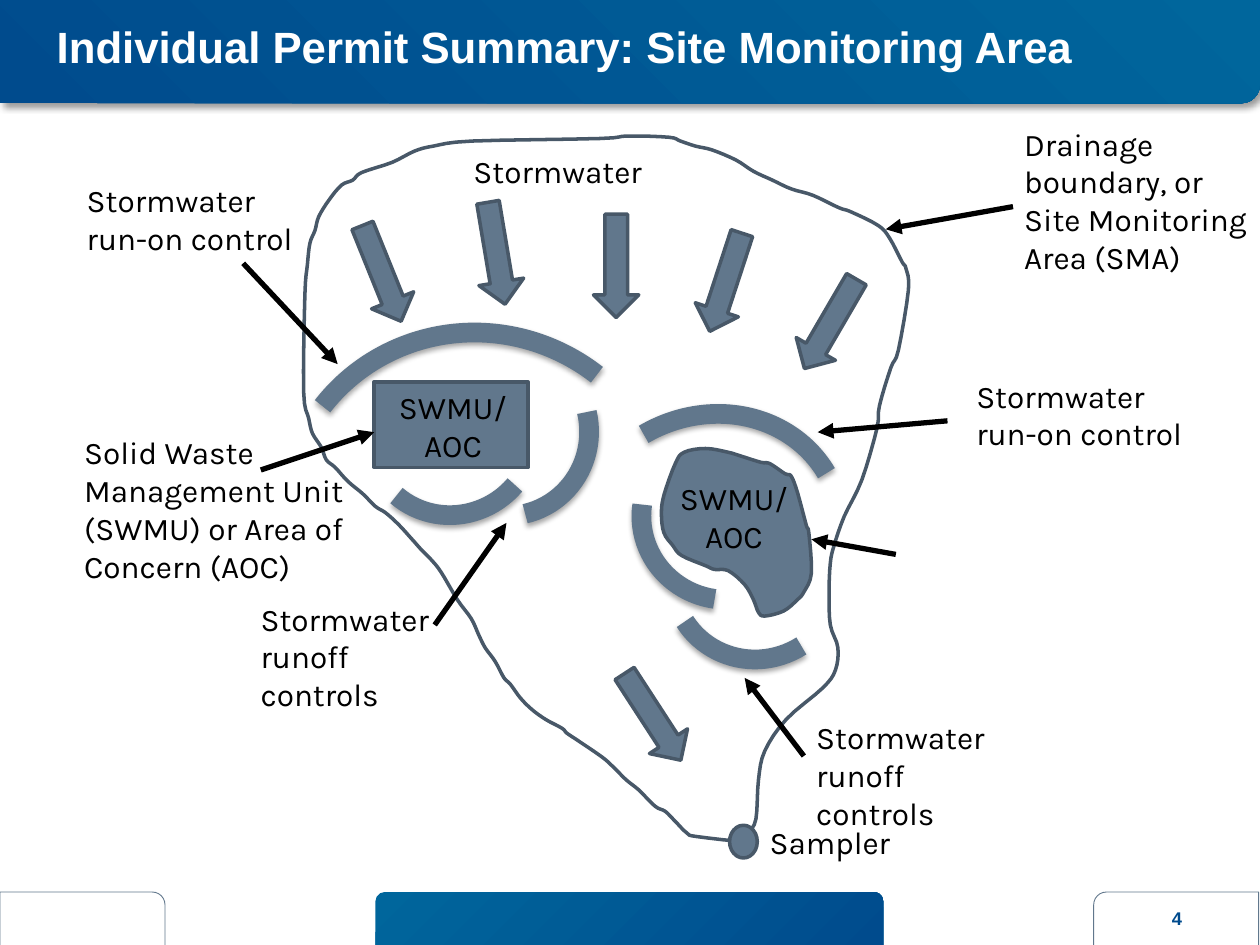
from typing import NamedTuple

from lxml import etree
from pptx import Presentation
from pptx.dml.color import RGBColor
from pptx.enum.shapes import MSO_CONNECTOR, MSO_SHAPE
from pptx.enum.text import MSO_ANCHOR, MSO_AUTO_SIZE, PP_ALIGN
from pptx.oxml.ns import qn
from pptx.util import Inches, Pt

ARC, ARROW, OVAL, RECT = MSO_SHAPE.ARC, MSO_SHAPE.RIGHT_ARROW, MSO_SHAPE.OVAL, MSO_SHAPE.RECTANGLE
ONE_ROUND, TWO_ROUND = MSO_SHAPE.ROUND_1_RECTANGLE, MSO_SHAPE.ROUND_2_SAME_RECTANGLE
STRAIGHT = MSO_CONNECTOR.STRAIGHT
LEFT, CENTER = PP_ALIGN.LEFT, PP_ALIGN.CENTER
TOP, MIDDLE = MSO_ANCHOR.TOP, MSO_ANCHOR.MIDDLE
GROW, FIXED = MSO_AUTO_SIZE.SHAPE_TO_FIT_TEXT, MSO_AUTO_SIZE.NONE

COLORS = {"slate": "61778C", "edge": "485868", "navy": "004B8D", "teal": "00669C",
          "white": "FFFFFF", "black": "000000"}


class Box(NamedTuple):
    left: float
    top: float
    width: float
    height: float


class Turned(NamedTuple):
    box: Box
    rotation: float


class Label(NamedTuple):
    text: str
    box: Box
    align: PP_ALIGN = LEFT


class Pointer(NamedTuple):
    start: tuple[float, float]
    end: tuple[float, float]


class Shadow(NamedTuple):
    alpha: int
    blur: float
    distance: float
    angle: int


BAND_SHADOW = Shadow(40, 4, 3, 45)
BERM_SHADOW = Shadow(35, 3.1, 1.8, 90)

BOUNDARY = [
    (5.94, 6.68), (5.53, 6.64), (5.45, 6.61), (5.36, 6.52), (5.28, 6.44), (5.2, 6.4), (5.07, 6.27),
    (4.97, 6.19), (4.87, 6.09), (4.78, 6.01), (4.59, 5.88), (4.5, 5.82), (4.46, 5.78), (4.33, 5.71),
    (4.22, 5.63), (4.13, 5.54), (4.05, 5.43), (4, 5.38), (3.93, 5.25), (3.85, 5.14), (3.8, 5.04),
    (3.74, 4.91), (3.63, 4.76), (3.5, 4.54), (3.42, 4.44), (3.35, 4.37), (3.27, 4.28), (3.16, 4.16),
    (3.06, 4.07), (2.98, 4.02), (2.88, 3.92), (2.76, 3.82), (2.66, 3.71), (2.59, 3.65), (2.55, 3.55),
    (2.48, 3.44), (2.45, 3.32), (2.41, 3.11), (2.42, 2.34), (2.44, 2.1), (2.46, 1.93), (2.5, 1.83),
    (2.53, 1.72), (2.61, 1.59), (2.71, 1.47), (2.8, 1.43), (2.87, 1.37), (3.11, 1.29), (3.29, 1.2),
    (3.44, 1.16), (3.75, 1.12), (4.76, 1.1), (4.98, 1.08), (5.31, 1.09), (5.4, 1.12), (5.52, 1.16),
    (5.65, 1.19), (5.84, 1.27), (5.98, 1.36), (6.13, 1.43), (6.28, 1.5), (6.45, 1.55), (6.66, 1.65),
    (6.75, 1.68), (6.97, 1.79), (7.06, 1.89), (7.16, 2.08), (7.19, 2.13), (7.21, 2.3), (7.13, 2.78),
    (7.07, 2.92), (6.98, 3.22), (6.96, 3.4), (6.84, 3.81), (6.7, 4.1), (6.62, 4.33), (6.59, 4.47),
    (6.58, 4.7), (6.59, 4.96), (6.65, 5.14), (6.63, 5.32), (6.53, 5.46), (6.24, 5.71), (6.07, 5.96),
    (6.02, 6.19), (6, 6.5), (5.94, 6.62)]
WASTE_AREA = [
    (5.78, 3.59), (5.6, 3.56), (5.43, 3.59), (5.36, 3.68), (5.27, 3.93), (5.25, 4.08), (5.27, 4.23),
    (5.34, 4.33), (5.41, 4.41), (5.6, 4.49), (5.67, 4.52), (5.78, 4.53), (5.91, 4.64), (5.98, 4.76),
    (6.02, 4.86), (6.07, 4.89), (6.22, 4.85), (6.33, 4.76), (6.38, 4.7), (6.44, 4.55), (6.42, 4.23),
    (6.4, 4.17), (6.33, 3.91), (6.28, 3.78), (6.23, 3.76), (6.11, 3.68), (6.04, 3.67), (5.88, 3.62)]

FLOW_ARROWS = [Turned(Box(left, top, 0.82, 0.36), rotation) for left, top, rotation in (
    (2.62, 1.99, 68), (3.53, 1.83, 80.5), (4.48, 1.93, 90), (5.35, 2.06, 108.1),
    (6.18, 2.39, 120.2), (4.77, 5.51, 57))]
RUNOFF_BERMS = [Turned(Box(left, top, 1.35, 1.32), rotation) for left, top, rotation in (
    (5.09, 3.44, 188.1), (5.33, 3.91, 147.5), (3.34, 2.76, 76.9), (2.91, 2.76, 130.5))]
RUN_ON_BERMS = [Turned(Box(4.52, 3.31, 2.19, 2), 329.6), Turned(Box(2.26, 2.62, 3.07, 3.13), 307.9)]

RUN_ON, RUNOFF, WASTE = "Stormwater run-on control", "Stormwater runoff controls", "SWMU/AOC"
LABELS = [
    Label("Stormwater", Box(3.66, 1.16, 2.4, 0.4)),
    Label(WASTE, Box(3.04, 3.03, 1.11, 0.71), CENTER),
    Label(WASTE, Box(5.27, 3.75, 1.11, 0.71), CENTER),
    Label("Sampler", Box(6.01, 6.48, 1.66, 0.4)),
    Label(RUNOFF, Box(6.38, 5.65, 1.87, 0.71)),
    Label(RUNOFF, Box(1.97, 4.71, 1.87, 0.71)),
    Label(RUN_ON, Box(7.65, 2.94, 1.94, 0.71)),
    Label(RUN_ON, Box(0.59, 1.39, 1.87, 0.71)),
    Label("Solid Waste Management Unit (SWMU) or Area of Concern (AOC)", Box(0.57, 3.39, 2.7, 1.31)),
    Label("Drainage boundary, or Site Monitoring Area (SMA)", Box(8.03, 0.94, 2, 1.31))]
POINTERS = [
    Pointer((6.38, 6), (5.91, 5.38)), Pointer((7.11, 4.4), (6.44, 4.28)),
    Pointer((7.52, 3.34), (6.49, 3.43)), Pointer((8.04, 1.64), (7.03, 1.82)),
    Pointer((3.45, 4.96), (4.02, 4.15)), Pointer((1.93, 2.09), (2.68, 2.89)),
    Pointer((2.07, 3.73), (2.97, 3.43))]


def rgb(name: str) -> RGBColor:
    return RGBColor.from_string(COLORS[name])


def paint(shape, fill: str | None, line: str | None, weight: float = 2) -> None:
    shape.shadow.inherit = False
    if fill:
        shape.fill.solid()
        shape.fill.fore_color.rgb = rgb(fill)
    else:
        shape.fill.background()
    if line:
        shape.line.color.rgb = rgb(line)
        shape.line.width = Pt(weight)
    else:
        shape.line.fill.background()


def add_preset(shapes, kind, box: Box, fill: str | None = "slate", line: str | None = "edge",
               weight: float = 2, rotation: float = 0):
    shape = shapes.add_shape(kind, *map(Inches, box))
    paint(shape, fill, line, weight)
    shape.rotation = rotation
    return shape


def cast_shadow(shape, shadow: Shadow) -> None:
    effects = shape._element.spPr.find(qn("a:effectLst"))
    outer = etree.SubElement(effects, qn("a:outerShdw"), blurRad=str(Pt(shadow.blur)),
                             dist=str(Pt(shadow.distance)), dir=str(shadow.angle * 60000),
                             algn="ctr", rotWithShape="0")
    color = etree.SubElement(outer, qn("a:srgbClr"), val=COLORS["black"])
    etree.SubElement(color, qn("a:alpha"), val=str(shadow.alpha * 1000))


def add_berm(shapes, berm: Turned) -> None:
    arc = add_preset(shapes, ARC, berm.box, None, "slate", 11.25, berm.rotation)
    cast_shadow(arc, BERM_SHADOW)


def add_band(shapes, kind, box: Box, start: str, end: str):
    band = add_preset(shapes, kind, box, None, None)
    band.fill.gradient()
    band.fill.gradient_angle = 315
    for stop, color, position in zip(band.fill.gradient_stops, (start, end), (0, 1)):
        stop.color.rgb = rgb(color)
        stop.position = position
    return band


def add_tab(shapes, left: float):
    tab = add_preset(shapes, ONE_ROUND, Box(left, 7.08, 1.31, 0.44), "white", "slate", 0.5)
    tab.adjustments[0] = 0.23
    return tab


def flip(shape, direction: str) -> None:
    shape._element.spPr.get_or_add_xfrm().set(direction, "1")


def smooth(points: list[tuple[float, float]], steps: int = 4) -> list[tuple[float, float]]:
    curve = []
    for i, p1 in enumerate(points):
        p0, p2, p3 = points[i - 1], points[(i + 1) % len(points)], points[(i + 2) % len(points)]
        for t in (step / steps for step in range(steps)):
            curve.append(tuple(
                Inches(b + t * (c - a) / 2 + t**2 * (a - 2.5 * b + 2 * c - d / 2)
                       + t**3 * (1.5 * (b - c) + (d - a) / 2))
                for a, b, c, d in zip(p0, p1, p2, p3)))
    return curve


def add_outline(shapes, points: list[tuple[float, float]], fill: str | None) -> None:
    first, *rest = smooth(points)
    builder = shapes.build_freeform(*first)
    builder.add_line_segments(rest, close=True)
    paint(builder.convert_to_shape(), fill, "edge")


def add_text(shapes, label: Label, size: float = 18, font: str = "Karla", color: str = "black",
             bold: bool = False, anchor=TOP, fit=GROW, insets=(0.1, 0.05, 0.1, 0.05)) -> None:
    frame = shapes.add_textbox(*map(Inches, label.box)).text_frame
    frame.word_wrap = True
    frame.auto_size = fit
    frame.vertical_anchor = anchor
    frame.margin_left, frame.margin_top, frame.margin_right, frame.margin_bottom = map(Inches, insets)
    paragraph = frame.paragraphs[0]
    paragraph.text = label.text
    paragraph.alignment = label.align
    paragraph.font.size, paragraph.font.name, paragraph.font.bold = Pt(size), font, bold
    paragraph.font.color.rgb = rgb(color)


def add_pointer(shapes, pointer: Pointer) -> None:
    line = shapes.add_connector(STRAIGHT, *map(Inches, pointer.start + pointer.end))
    line.line.color.rgb = rgb("black")
    line.line.width = Pt(3)
    etree.SubElement(line.line._get_or_add_ln(), qn("a:tailEnd"), type="triangle")
    etree.SubElement(line._element.spPr, qn("a:effectLst"))


def add_frame(shapes) -> None:
    flip(add_tab(shapes, 8.68), "flipH")
    add_tab(shapes, 0)
    add_band(shapes, TWO_ROUND, Box(2.98, 7.08, 4.03, 0.44), "teal", "navy")
    header = add_band(shapes, ONE_ROUND, Box(0, 0, 10, 0.82), "navy", "teal")
    header.adjustments[0] = 0.18
    flip(header, "flipV")
    cast_shadow(header, BAND_SHADOW)
    add_text(shapes, Label("4", Box(9.18, 7.07, 0.32, 0.44), CENTER), 10.5, "Arial", "navy", True,
             MIDDLE, FIXED, (0, 0, 0, 0))
    add_text(shapes, Label("Individual Permit Summary: Site Monitoring Area", Box(0.25, 0.08, 9.22, 0.57)),
             25, "Arial", "white", True, MIDDLE, FIXED, (0.2, 0.05, 0.1, 0.05))


def main() -> None:
    """Build the site monitoring area slide."""
    deck = Presentation()
    deck.slide_width, deck.slide_height = Inches(10), Inches(7.5)
    shapes = deck.slides.add_slide(deck.slide_layouts[6]).shapes
    add_frame(shapes)
    add_outline(shapes, BOUNDARY, None)
    for arrow in FLOW_ARROWS:
        add_preset(shapes, ARROW, arrow.box, rotation=arrow.rotation)
    add_preset(shapes, RECT, Box(2.97, 3.03, 1.22, 0.68))
    add_outline(shapes, WASTE_AREA, "slate")
    add_preset(shapes, OVAL, Box(5.79, 6.55, 0.22, 0.26))
    for berm in RUNOFF_BERMS + RUN_ON_BERMS:
        add_berm(shapes, berm)
    for pointer in POINTERS:
        add_pointer(shapes, pointer)
    for label in LABELS:
        add_text(shapes, label)
    deck.save("out.pptx")


if __name__ == "__main__":
    main()
